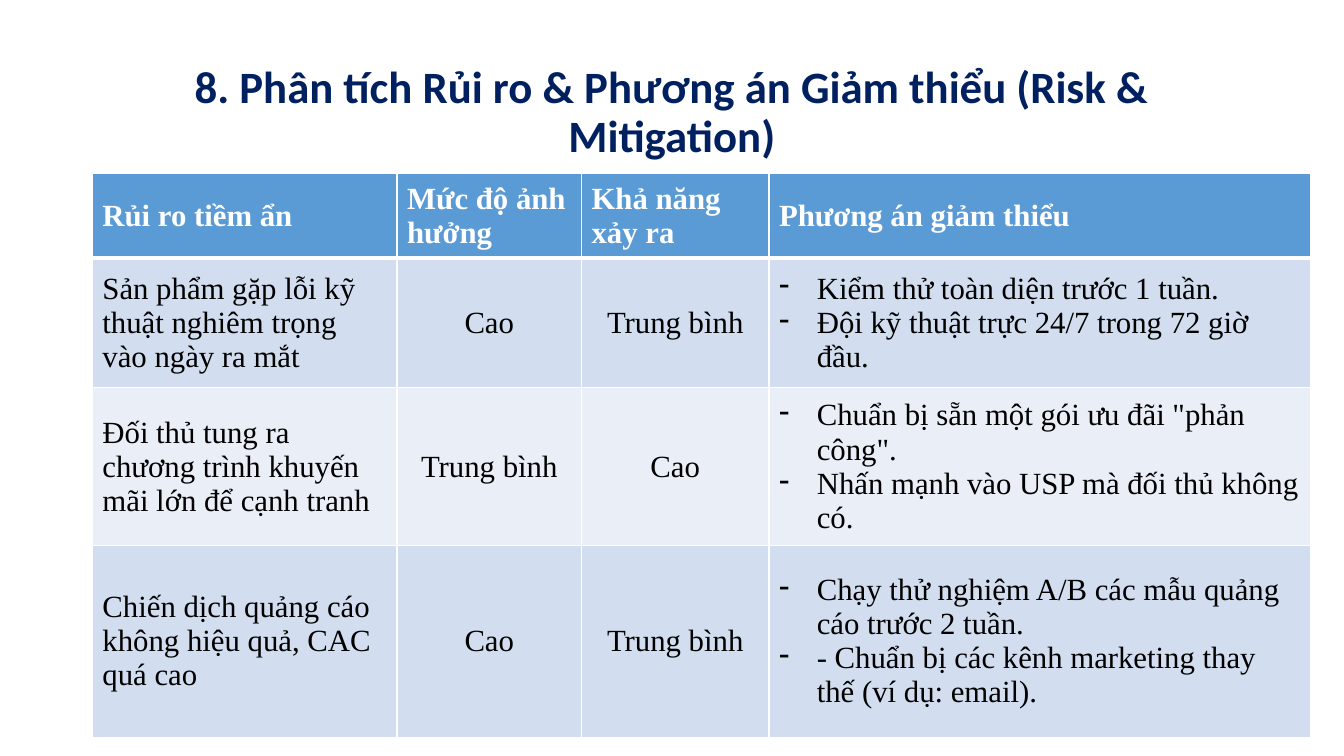
from lxml.etree import SubElement
from pptx import Presentation
from pptx.dml.color import RGBColor
from pptx.enum.text import MSO_ANCHOR as Anchor, PP_ALIGN as Align
from pptx.oxml.ns import qn
from pptx.util import Pt

NAVY = RGBColor(0x00, 0x20, 0x60)
BLUE = RGBColor(0x5B, 0x9B, 0xD5)
PALE_BLUE = RGBColor(0xD2, 0xDE, 0xEF)
PALER_BLUE = RGBColor(0xEA, 0xEF, 0xF7)
WHITE = RGBColor(0xFF, 0xFF, 0xFF)
BLACK = RGBColor(0x00, 0x00, 0x00)

TITLE_FONT = {"name": "Calibri", "size": Pt(32), "bold": True}
HEADER_FONT = {"name": "Times New Roman", "size": Pt(22), "bold": True}
BODY_FONT = {**HEADER_FONT, "bold": False}

TITLE = "8. Phân tích Rủi ro & Phương án Giảm thiểu (Risk & Mitigation)"
TITLE_BOX = (66, 28.8, 828, 104.4)
TABLE_BOX = (66, 124.1, 870, 372.3)
COLUMN_WIDTHS = (217.6, 131.8, 133.9, 386.7)
ROW_HEIGHTS = (49.7, 92.9, 92.9, 136.8)
HANGING_INDENT = 27
THIN, THICK = 1, 3

HEADERS = ("Rủi ro tiềm ẩn", "Mức độ ảnh hưởng", "Khả năng xảy ra", "Phương án giảm thiểu")
RISKS = (
    ("Sản phẩm gặp lỗi kỹ thuật nghiêm trọng vào ngày ra mắt", "Cao", "Trung bình",
     ("Kiểm thử toàn diện trước 1 tuần.",
      "Đội kỹ thuật trực 24/7 trong 72 giờ đầu.")),
    ("Đối thủ tung ra chương trình khuyến mãi lớn để cạnh tranh", "Trung bình", "Cao",
     ('Chuẩn bị sẵn một gói ưu đãi "phản công".',
      "Nhấn mạnh vào USP mà đối thủ không có.")),
    ("Chiến dịch quảng cáo không hiệu quả, CAC quá cao", "Cao", "Trung bình",
     ("Chạy thử nghiệm A/B các mẫu quảng cáo trước 2 tuần.",
      "- Chuẩn bị các kênh marketing thay thế (ví dụ: email).")),
)


def write(para, text, font, color, align):
    para.alignment = align
    span = para.add_run()
    span.text = text
    for name, value in font.items():
        setattr(span.font, name, value)
    span.font.color.rgb = color


def add_dash(para):
    props = para._p.get_or_add_pPr()
    props.set("marL", str(Pt(HANGING_INDENT)))
    props.set("indent", str(-Pt(HANGING_INDENT)))
    SubElement(props, qn("a:buFontTx"))
    SubElement(props, qn("a:buChar"), char="-")


def set_borders(cell, top, bottom):
    props = cell._tc.get_or_add_tcPr()
    widths = {"a:lnL": THIN, "a:lnR": THIN, "a:lnT": top, "a:lnB": bottom}
    for tag, width in widths.items():
        line = SubElement(props, qn(tag), w=str(Pt(width)))
        fill = SubElement(line, qn("a:solidFill"))
        SubElement(fill, qn("a:srgbClr"), val=str(WHITE))


def fill_cell(cell, texts, font, color, align, fill, bulleted=False):
    cell.vertical_anchor = Anchor.MIDDLE
    cell.fill.solid()
    cell.fill.fore_color.rgb = fill
    frame = cell.text_frame
    for index, text in enumerate(texts):
        para = frame.add_paragraph() if index else frame.paragraphs[0]
        write(para, text, font, color, align)
        if bulleted:
            add_dash(para)


def add_title(page, box):
    frame = page.shapes.add_textbox(*map(Pt, box)).text_frame
    frame.word_wrap = True
    frame.vertical_anchor = Anchor.MIDDLE
    para = frame.paragraphs[0]
    para.line_spacing = 0.9
    write(para, TITLE, TITLE_FONT, NAVY, Align.CENTER)


def add_risk_table(page, box):
    shape = page.shapes.add_table(len(ROW_HEIGHTS), len(COLUMN_WIDTHS), *map(Pt, box))
    table = shape.table
    for column, width in zip(table.columns, COLUMN_WIDTHS):
        column.width = Pt(width)
    for row, height in zip(table.rows, ROW_HEIGHTS):
        row.height = Pt(height)

    for column, header in enumerate(HEADERS):
        cell = table.cell(0, column)
        set_borders(cell, THIN, THICK)
        fill_cell(cell, [header], HEADER_FONT, WHITE, Align.LEFT, BLUE)

    for row, (risk, impact, likelihood, actions) in enumerate(RISKS, 1):
        band = PALE_BLUE if row % 2 else PALER_BLUE
        contents = (([risk], Align.LEFT), ([impact], Align.CENTER),
                    ([likelihood], Align.CENTER), (actions, Align.LEFT))
        for column, (texts, align) in enumerate(contents):
            cell = table.cell(row, column)
            set_borders(cell, THICK if row == 1 else THIN, THIN)
            fill_cell(cell, texts, BODY_FONT, BLACK, align, band, texts is actions)


def main():
    deck = Presentation()
    deck.slide_width, deck.slide_height = Pt(960), Pt(540)
    page = deck.slides.add_slide(deck.slide_layouts[6])
    add_title(page, TITLE_BOX)
    add_risk_table(page, TABLE_BOX)
    deck.save("out.pptx")


if __name__ == "__main__":
    main()
